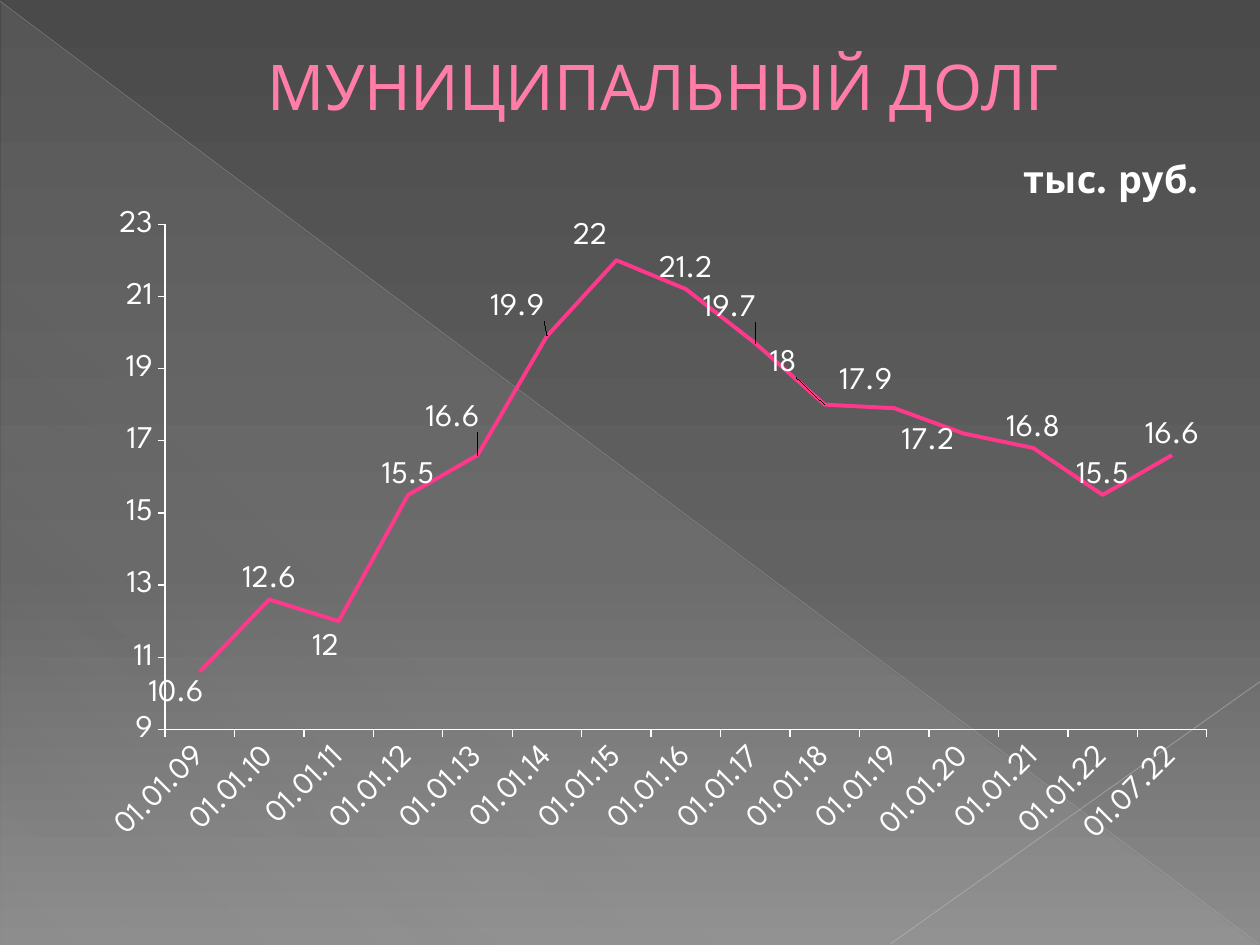
from lxml.etree import SubElement
from pptx import Presentation
from pptx.chart.data import CategoryChartData
from pptx.dml.color import RGBColor
from pptx.enum.chart import XL_CHART_TYPE as ChartType
from pptx.enum.chart import XL_LABEL_POSITION as LabelPos
from pptx.enum.chart import XL_TICK_MARK as Tick
from pptx.enum.shapes import MSO_CONNECTOR as Connector
from pptx.enum.shapes import MSO_SHAPE as Shape
from pptx.enum.text import MSO_ANCHOR as Anchor
from pptx.enum.text import PP_ALIGN as Align
from pptx.oxml.ns import qn
from pptx.util import Inches, Pt

COLORS = {
    "text": "FFFFFF", "heading": "FF7DA7", "heading_edge": "B12761",
    "debt": "FF388C", "long_line": "BFBFBF", "short_line": "C6C6C6",
    "sky_top": "4A4A4A", "sky_mid": "626262", "sky_low": "8C8C8C",
    "wedge": "D2D2D2",
}
FONT = "League Spartan"
CELL = 0.1  # inches: the slide is 100 columns by 75 rows
C15 = "http://schemas.microsoft.com/office/drawing/2012/chart"

DATES = [f"01.01.{year:02}" for year in range(9, 23)] + ["01.07.22"]
DEBT = [10.6, 12.6, 12, 15.5, 16.6, 19.9, 22, 21.2, 19.7, 18, 17.9, 17.2,
        16.8, 15.5, 16.6]
# Shift of single labels from their place above the point, in chart percent
LABEL_SHIFTS = {
    0: (-2, 5.6), 2: (-1.1, 6.3), 4: (-2.1, -2.4), 5: (-2.5, -1.3),
    6: (-2.2, -0.6), 8: (-2.2, -2.1), 9: (-3.5, -3), 10: (-2.4, -1),
    11: (-3, 3.8),
}


def grid(*cells):
    return [Inches(cell * CELL) for cell in cells]


def apply(target, values):
    for name, value in values.items():
        setattr(target, name, value)


def set_layout(parent, index, modes, **percents):
    """Give a chart part a manual layout in percent of the chart."""
    for old in parent.findall(qn("c:layout")):
        parent.remove(old)
    layout = parent.makeelement(qn("c:layout"))
    parent.insert(index, layout)
    manual = SubElement(layout, qn("c:manualLayout"))
    for tag, value in modes.items():
        SubElement(manual, qn(f"c:{tag}"), val=value)
    for tag, value in percents.items():
        SubElement(manual, qn(f"c:{tag}"), val=f"{value / 100:.3f}")


class DebtSlide:
    def __init__(self, deck):
        self.slide = deck.slides.add_slide(deck.slide_layouts[5])

    def color(self, name):
        return RGBColor.from_string(COLORS[name])

    def style_font(self, font, size=18, color="text", bold=False):
        apply(font, {"name": FONT, "size": Pt(size), "bold": bold})
        font.color.rgb = self.color(color)

    def style_line(self, line, color, width):
        line.color.rgb = self.color(color)
        line.width = Pt(width)

    def gradient(self, fill, element, stops, angle):
        fill.gradient()
        fill.gradient_angle = 360 - angle
        stop_list = next(element.iter(qn("a:gsLst")))
        stop_list.clear()
        for share, color, alpha in stops:
            stop = SubElement(stop_list, qn("a:gs"), pos=str(share * 1000))
            tone = SubElement(stop, qn("a:srgbClr"), val=COLORS[color])
            SubElement(tone, qn("a:alpha"), val=str(alpha * 1000))

    def background(self, stops, angle):
        self.gradient(self.slide.background.fill, self.slide.element, stops, angle)

    def wedge(self, box, stops, angle):
        wedge = self.slide.shapes.add_shape(Shape.RIGHT_TRIANGLE, *grid(*box))
        wedge.shadow.inherit = False
        wedge.line.fill.background()
        self.gradient(wedge.fill, wedge.element, stops, angle)

    def line(self, ends, color, width, alpha):
        line = self.slide.shapes.add_connector(Connector.STRAIGHT, *grid(*ends))
        self.style_line(line.line, color, width)
        properties = line.element.spPr
        tone = next(properties.iter(qn("a:srgbClr")))
        SubElement(tone, qn("a:alpha"), val=str(alpha * 1000))
        SubElement(properties, qn("a:effectLst"))

    def title(self, text, box):
        title = self.slide.shapes.title
        self.slide.shapes.element.append(title.element)  # above the decoration
        apply(title, dict(zip(("left", "top", "width", "height"), grid(*box))))
        frame = title.text_frame
        apply(frame, {"text": text, "word_wrap": True,
                      "vertical_anchor": Anchor.MIDDLE})
        paragraph = frame.paragraphs[0]
        paragraph.alignment = Align.CENTER
        indents = paragraph._p.get_or_add_pPr()
        indents.set("marL", str(Inches(0.53)))
        indents.set("indent", "0")
        self.style_font(paragraph.runs[0].font, 36, "heading")
        run_format = paragraph.runs[0]._r.get_or_add_rPr()
        edge = run_format.makeelement(qn("a:ln"), w=str(Pt(0.5)))
        run_format.insert(0, edge)
        edge_fill = SubElement(edge, qn("a:solidFill"))
        SubElement(edge_fill, qn("a:srgbClr"), val=COLORS["heading_edge"])

    def axis(self, axis, values):
        apply(axis, {"has_major_gridlines": False,
                     "major_tick_mark": Tick.OUTSIDE,
                     "minor_tick_mark": Tick.NONE, **values})
        self.style_line(axis.format.line, "text", 0.75)
        self.style_font(axis.tick_labels.font)

    def point_labels(self, series, shifts):
        labels = series.data_labels
        apply(labels, {"show_value": True, "position": LabelPos.ABOVE})
        self.style_font(labels.font)
        for index in shifts:
            label = series.points[index].data_label
            self.style_font(label.font)
            label.position = LabelPos.ABOVE
        for element in labels._element.iter(qn("c:dLbl")):
            x, y = shifts[int(element.find(qn("c:idx")).get("val"))]
            set_layout(element, 1, {}, x=x, y=y)
        # No leader lines to the moved labels
        extension = SubElement(
            SubElement(labels._element, qn("c:extLst")), qn("c:ext"),
            nsmap={"c15": C15}, uri="{CE6537A1-D6FC-4f65-9D91-7224C49458BB}")
        SubElement(extension, f"{{{C15}}}showLeaderLines", val="0")

    def line_chart(self, box, unit, dates, values, shifts):
        data = CategoryChartData()
        data.categories = dates
        data.add_series("Series 1", values)
        chart = self.slide.shapes.add_chart(
            ChartType.LINE, *grid(*box), data).chart
        chart.has_legend = False
        self.style_font(chart.font)

        # Clear chart area and fixed plot area
        space = chart.element
        area = space.makeelement(qn("c:spPr"))
        SubElement(area, qn("a:noFill"))
        SubElement(SubElement(area, qn("a:ln")), qn("a:noFill"))
        space.find(qn("c:txPr")).addprevious(area)
        edges = {"xMode": "edge", "yMode": "edge"}
        set_layout(next(space.iter(qn("c:plotArea"))), 0,
                   {"layoutTarget": "inner", **edges},
                   x=10.9, y=10.8, w=87.5, h=68.8)

        # Unit of measure
        chart.has_title = True
        heading = chart.chart_title
        heading.text_frame.text = unit
        self.style_font(heading.text_frame.paragraphs[0].runs[0].font, 21.6,
                        bold=True)
        set_layout(heading._element, 1, edges, x=82.4, y=1.5)

        # Axes
        self.axis(chart.value_axis, {"minimum_scale": 9, "maximum_scale": 23,
                                     "major_unit": 2})
        self.axis(chart.category_axis, {})
        dates_text = chart.category_axis._element.find(qn("c:txPr"))
        dates_text.find(qn("a:bodyPr")).set("rot", str(-45 * 60000))

        # Debt line and its labels
        chart.plots[0].vary_by_categories = False
        debt = chart.plots[0].series[0]
        debt.smooth = False
        self.style_line(debt.format.line, "debt", 2.25)
        self.point_labels(debt, shifts)


def main():
    deck = Presentation()
    apply(deck, {"slide_width": Inches(10), "slide_height": Inches(7.5)})
    page = DebtSlide(deck)

    # Backdrop
    page.background([(0, "sky_top", 100), (60, "sky_mid", 100),
                     (100, "sky_low", 100)], 90)
    page.wedge((0.1, 0.2, 99.8, 74.8),
               [(0, "wedge", 10), (70, "wedge", 8), (100, "wedge", 1)], 133)
    page.line((0, 0.1, 99.9, 74.9), "long_line", 0.39, 35)
    page.line((100, 54.1, 70.7, 74.9), "short_line", 0.47, 45)

    # Content
    page.title("МУНИЦИПАЛЬНЫЙ ДОЛГ", (5, 2.9, 90, 7.8))
    page.line_chart((2.8, 11.5, 94.5, 58.3), "тыс. руб.", DATES, DEBT,
                    LABEL_SHIFTS)
    deck.save("out.pptx")


if __name__ == "__main__":
    main()
